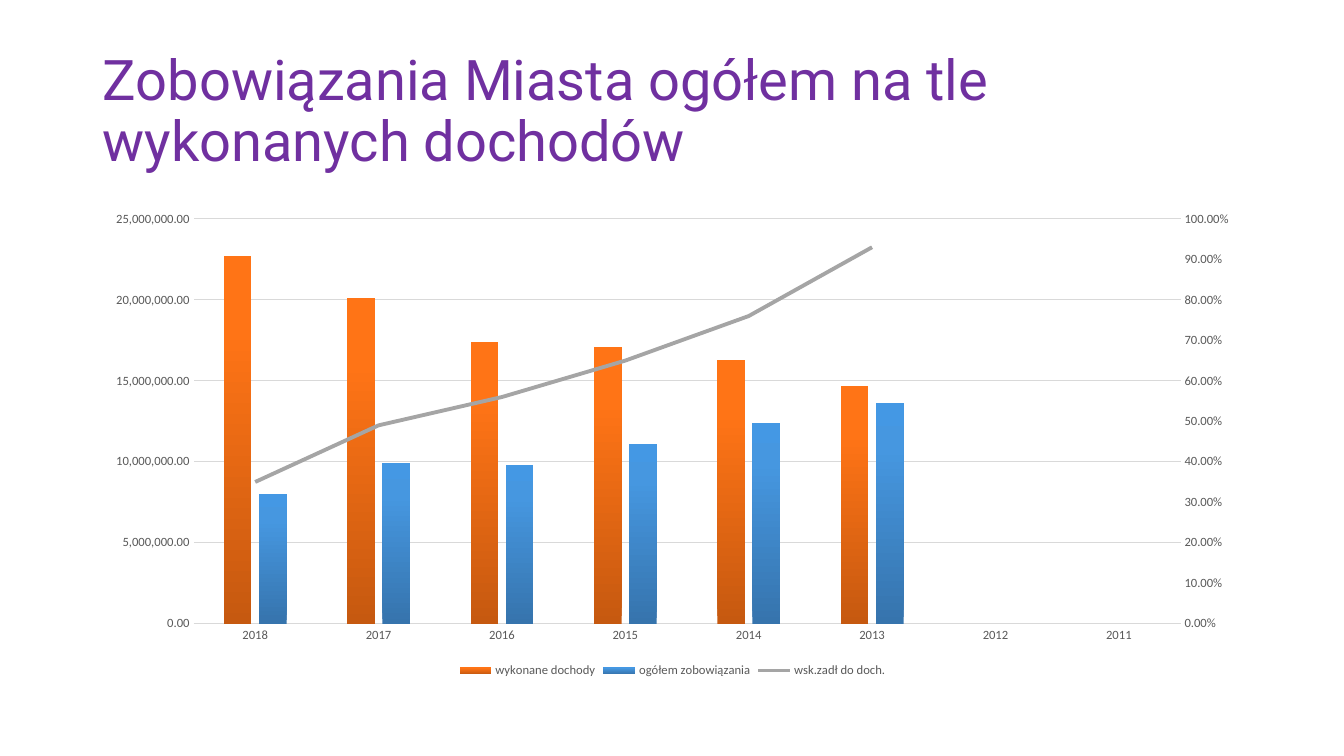
from typing import NamedTuple, Optional

from pptx import Presentation
from pptx.chart.data import CategoryChartData
from pptx.dml.color import RGBColor
from pptx.enum.chart import XL_CHART_TYPE as CT, XL_LEGEND_POSITION as LP
from pptx.enum.chart import XL_MARKER_STYLE as MS, XL_TICK_MARK as TM
from pptx.enum.text import MSO_ANCHOR
from pptx.oxml import parse_xml
from pptx.oxml.ns import nsdecls, qn
from pptx.util import Emu, Pt

GREY, RULE = "595959", "D9D9D9"
YEARS = [str(year) for year in range(2018, 2010, -1)]
AMOUNT, PERCENT = "#,##0.00", "0.00%"
LINE_CAT_ID, LINE_VAL_ID = 50010, 50020


class Box(NamedTuple):
    left: int
    top: int
    width: int
    height: int


class Series(NamedTuple):
    name: str
    values: list[float]
    number_format: str
    stops: Optional[list[tuple[int, str]]] = None


TITLE_BOX = Box(93, 40, 1159, 146)
CHART_BOX = Box(93, 202, 1159, 480)

SERIES = [
    Series("wykonane dochody", [22_700_000, 20_100_000, 17_400_000, 17_100_000, 16_300_000, 14_700_000],
           AMOUNT, [(0, "C65910"), (80, "FF7416"), (100, "FF7517")]),
    Series("ogółem zobowiązania", [8_000_000, 9_900_000, 9_800_000, 11_100_000, 12_400_000, 13_600_000],
           AMOUNT, [(0, "3674AD"), (80, "4697E0"), (100, "4498E4")]),
    Series("wsk.zadł do doch.", [0.35, 0.49, 0.56, 0.65, 0.76, 0.93], PERCENT),
]


def px(n: int) -> Emu:
    return Emu(round(n * 914400 / 100.8))


def rgb(color: str) -> RGBColor:
    return RGBColor.from_string(color)


def set_font(font, size: int, color: str, name: str = "Calibri") -> None:
    font.size, font.name = Pt(size), name
    font.color.rgb = rgb(color)


def add_title(slide, box: Box, text: str) -> None:
    tf = slide.shapes.add_textbox(*map(px, box)).text_frame
    tf.word_wrap = True
    tf.vertical_anchor = MSO_ANCHOR.MIDDLE
    p = tf.paragraphs[0]
    p.text = text
    p.line_spacing = 0.9
    set_font(p.runs[0].font, 40, "7030A0", "Roboto")


def fill_gradient(series, stops: list[tuple[int, str]]) -> None:
    gs = "".join(f'<a:gs pos="{pos * 1000}"><a:srgbClr val="{color}"/></a:gs>' for pos, color in stops)
    series.format.line.fill.background()
    series._element.get_or_add_spPr().insert(0, parse_xml(
        f'<a:gradFill {nsdecls("a")} rotWithShape="1"><a:gsLst>{gs}</a:gsLst>'
        '<a:lin ang="16200000" scaled="0"/></a:gradFill>'))


def move_last_to_line(chart) -> None:
    """Turn the last bar series into a line on a right-hand percent axis."""
    plot_area = chart._chartSpace.chart.plotArea
    bars = plot_area.find(qn("c:barChart"))
    ser = bars.findall(qn("c:ser"))[-1]
    for bar_only in ser.findall(qn("c:invertIfNegative")):
        ser.remove(bar_only)
    line = parse_xml(
        f'<c:lineChart {nsdecls("c")}><c:grouping val="standard"/><c:varyColors val="0"/>'
        f'<c:marker val="1"/><c:axId val="{LINE_CAT_ID}"/><c:axId val="{LINE_VAL_ID}"/></c:lineChart>')
    line.insert(2, ser)
    bars.addnext(line)
    cat_axis = parse_xml(
        f'<c:catAx {nsdecls("c")}><c:axId val="{LINE_CAT_ID}"/>'
        '<c:scaling><c:orientation val="minMax"/></c:scaling><c:delete val="1"/><c:axPos val="b"/>'
        f'<c:crossAx val="{LINE_VAL_ID}"/><c:crosses val="autoZero"/></c:catAx>')
    val_axis = parse_xml(
        f'<c:valAx {nsdecls("c", "a")}><c:axId val="{LINE_VAL_ID}"/><c:scaling>'
        '<c:orientation val="minMax"/><c:max val="1"/><c:min val="0"/></c:scaling>'
        f'<c:delete val="0"/><c:axPos val="r"/><c:numFmt formatCode="{PERCENT}" sourceLinked="0"/>'
        '<c:majorTickMark val="none"/><c:minorTickMark val="none"/><c:tickLblPos val="nextTo"/>'
        '<c:spPr><a:ln><a:noFill/></a:ln></c:spPr>'
        '<c:txPr><a:bodyPr/><a:p><a:pPr><a:defRPr sz="900"><a:solidFill>'
        f'<a:srgbClr val="{GREY}"/></a:solidFill><a:latin typeface="Calibri"/></a:defRPr></a:pPr>'
        '<a:endParaRPr lang="pl-PL"/></a:p></c:txPr>'
        f'<c:crossAx val="{LINE_CAT_ID}"/><c:crosses val="max"/><c:crossBetween val="between"/>'
        '<c:majorUnit val="0.1"/></c:valAx>')
    last_axis = plot_area.find(qn("c:valAx"))
    last_axis.addnext(val_axis)
    val_axis.addnext(cat_axis)


def style_axes(chart) -> None:
    cat, val = chart.category_axis, chart.value_axis
    for axis in (cat, val):
        axis.major_tick_mark = axis.minor_tick_mark = TM.NONE
        set_font(axis.tick_labels.font, 9, GREY)
    cat.format.line.color.rgb = rgb(RULE)
    cat.format.line.width = Pt(1)
    val.format.line.fill.background()
    val.minimum_scale, val.maximum_scale, val.major_unit = 0, 25_000_000, 5_000_000
    val.tick_labels.number_format = AMOUNT
    val.tick_labels.number_format_is_linked = False
    grid = val.major_gridlines.format.line
    grid.color.rgb = rgb(RULE)
    grid.width = Pt(0.75)


def add_debt_chart(slide, box: Box) -> None:
    data = CategoryChartData()
    data.categories = YEARS
    for item in SERIES:
        gaps = [None] * (len(YEARS) - len(item.values))
        data.add_series(item.name, item.values + gaps, item.number_format)
    chart = slide.shapes.add_chart(CT.COLUMN_CLUSTERED, *map(px, box), data).chart
    set_font(chart.font, 10, "000000")
    chart.has_title = False
    style_axes(chart)
    move_last_to_line(chart)

    # Columns
    bars, lines = chart.plots
    bars.vary_by_categories = False
    bars.gap_width, bars.overlap = 219, -27
    for series, item in zip(bars.series, SERIES):
        series.invert_if_negative = False
        fill_gradient(series, item.stops)

    # Debt ratio line
    ratio = lines.series[0]
    ratio.smooth = False
    ratio.marker.style = MS.NONE
    ratio.format.line.color.rgb = rgb("A5A5A5")
    ratio.format.line.width = Pt(2.75)

    # Legend
    chart.has_legend = True
    chart.legend.position = LP.BOTTOM
    chart.legend.include_in_layout = False
    set_font(chart.legend.font, 9, GREY)


def main() -> None:
    prs = Presentation()
    prs.slide_width, prs.slide_height = px(1344), px(756)
    slide = prs.slides.add_slide(prs.slide_layouts[6])
    add_title(slide, TITLE_BOX, "Zobowiązania Miasta ogółem na tle wykonanych dochodów")
    add_debt_chart(slide, CHART_BOX)
    prs.save("out.pptx")


if __name__ == "__main__":
    main()
